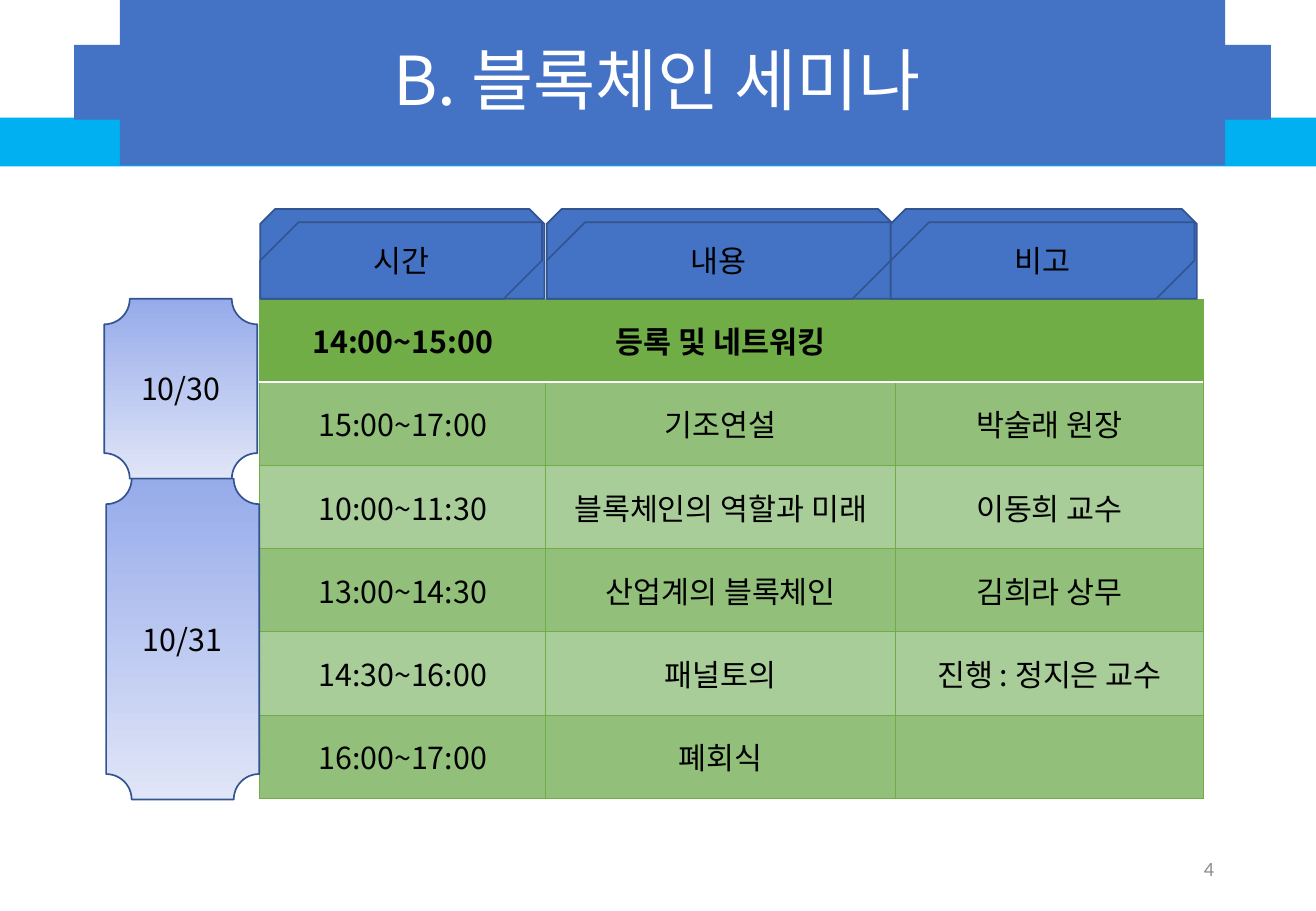
from lxml import etree
from pptx import Presentation
from pptx.dml.color import RGBColor
from pptx.enum.shapes import MSO_SHAPE
from pptx.enum.text import MSO_ANCHOR, PP_ALIGN
from pptx.oxml.ns import qn
from pptx.util import Cm, Pt

RECT, CROSS, PLAQUE = MSO_SHAPE.RECTANGLE, MSO_SHAPE.CROSS, MSO_SHAPE.PLAQUE
TAB, DIAG = MSO_SHAPE.SNIP_2_SAME_RECTANGLE, MSO_SHAPE.SNIP_2_DIAG_RECTANGLE
CENTER, RIGHT = PP_ALIGN.CENTER, PP_ALIGN.RIGHT
MIDDLE = MSO_ANCHOR.MIDDLE

KOREAN, LATIN = "Noto Sans CJK KR", "Calibri"
COLORS = {
    "white": "FFFFFF", "black": "000000", "gray": "8C8C8C",
    "blue": "4472C4", "edge": "325491", "sky": "00B0F0",
    "top": "96ABEA", "bottom": "E0E5F7",
    "green": "70AD47", "dark": "92C07A", "light": "A9CD99",
}

TABLE_LEFT, TABLE_TOP, ROW = 5.43, 6.25, 1.74
WIDTHS = [5.98, 7.31, 6.43]
ROWS = [
    ["14:00~15:00", "등록 및 네트워킹", ""],
    ["15:00~17:00", "기조연설", "박술래 원장"],
    ["10:00~11:30", "블록체인의 역할과 미래", "이동희 교수"],
    ["13:00~14:30", "산업계의 블록체인", "김희라 상무"],
    ["14:30~16:00", "패널토의", "진행 : 정지은 교수"],
    ["16:00~17:00", "폐회식", ""],
]
HEADS = [("시간", 5.44, 5.94), ("내용", 11.43, 7.24), ("비고", 18.62, 6.4)]
DATES = [("10/30", 2.18, 6.25, 3.76), ("10/31", 2.22, 10.01, 6.71)]


def rgb(name):
    return RGBColor.from_string(COLORS[name])


class Deck:
    """Holds the presentation, its current slide and the shared text style."""

    def __init__(self, width, height):
        self.prs = Presentation()
        self.prs.slide_width, self.prs.slide_height = Cm(width), Cm(height)
        self.slide = self.prs.slides.add_slide(self.prs.slide_layouts[5])
        self.shapes = self.slide.shapes

    def set_text(self, frame, text, size=18, color="black", font=KOREAN,
                 align=CENTER, bold=False):
        frame.text = text
        frame.word_wrap = True
        para = frame.paragraphs[0]
        para.alignment = align
        for run in para.runs:
            run.font.name, run.font.size, run.font.bold = font, Pt(size), bold
            run.font.color.rgb = rgb(color)
            east = etree.SubElement(run.font._element, qn("a:ea"))
            east.set("typeface", font)

    def title(self, text, *box):
        """Fill the title placeholder and bring it in front of the banner."""
        title = self.shapes.title
        title.left, title.top, title.width, title.height = map(Cm, box)
        self.set_text(title.text_frame, text, 40, "white")
        title.text_frame.vertical_anchor = MIDDLE
        title.text_frame.paragraphs[0].line_spacing = 0.9
        self.shapes._spTree.append(title._element)

    def shape(self, kind, *box, fill="blue", line=None, text="", adjust=()):
        """Draw a preset shape; a pair of fill names makes a gradient."""
        shape = self.shapes.add_shape(kind, *map(Cm, box))
        shape.shadow.inherit = False
        for i, value in enumerate(adjust):
            shape.adjustments[i] = value
        if isinstance(fill, tuple):
            shape.fill.gradient()
            shape.fill.gradient_angle = 270
            for stop, name in zip(shape.fill.gradient_stops, fill):
                stop.color.rgb = rgb(name)
        else:
            shape.fill.solid()
            shape.fill.fore_color.rgb = rgb(fill)
        if line:
            shape.line.color.rgb = rgb(line)
            shape.line.width = Pt(1)
        else:
            shape.line.fill.background()
        if text:
            self.set_text(shape.text_frame, text)
            shape.text_frame.vertical_anchor = MIDDLE

    def label(self, text, *box, **style):
        frame = self.shapes.add_textbox(*map(Cm, box)).text_frame
        frame.vertical_anchor = MIDDLE
        self.set_text(frame, text, **style)

    def border(self, cell, side, color, width):
        props = cell._tc.get_or_add_tcPr()
        line = etree.SubElement(props, qn("a:ln" + side), w=str(Pt(width)))
        fill = etree.SubElement(line, qn("a:solidFill"))
        etree.SubElement(fill, qn("a:srgbClr"), val=COLORS[color])

    def table(self, left, top, widths, height, rows):
        table = self.shapes.add_table(
            len(rows), len(widths), Cm(left), Cm(top),
            Cm(sum(widths)), Cm(height * len(rows))).table
        for col, width in zip(table.columns, widths):
            col.width = Cm(width)
        for r, texts in enumerate(rows):
            table.rows[r].height = Cm(height)
            fill = "green" if r == 0 else ("light", "dark")[r % 2]
            for c, text in enumerate(texts):
                cell = table.cell(r, c)
                for side in "LRTB":
                    divider = (r, side) in ((0, "B"), (1, "T"))
                    self.border(cell, side, *(("white", 1) if divider
                                              else ("green", 0.5)))
                cell.fill.solid()
                cell.fill.fore_color.rgb = rgb(fill)
                cell.vertical_anchor = MIDDLE
                self.set_text(cell.text_frame, text, bold=r == 0)


def main():
    deck = Deck(27.51, 19.05)
    deck.shape(RECT, 0, 2.46, 27.51, 1.02, fill="sky")
    deck.shape(CROSS, 1.55, -0.02, 25.02, 3.48, adjust=[0.275])
    deck.title("B. 블록체인 세미나", 1.88, 0, 23.72, 3.48)
    deck.label("4", 19.43, 17.65, 6.2, 1.02, size=12, color="gray",
               font=LATIN, align=RIGHT)
    deck.table(TABLE_LEFT, TABLE_TOP, WIDTHS, ROW, ROWS)
    for text, left, top, height in DATES:
        deck.shape(PLAQUE, left, top, 3.2, height, fill=("top", "bottom"),
                   line="edge", text=text)
    for text, left, width in HEADS:
        deck.shape(TAB, left, 4.37, width, 1.88, line="edge")
        deck.shape(DIAG, left, 4.65, width - 0.05, 1.6, line="edge",
                   text=text, adjust=[0.5, 0])
    deck.prs.save("out.pptx")


if __name__ == "__main__":
    main()
